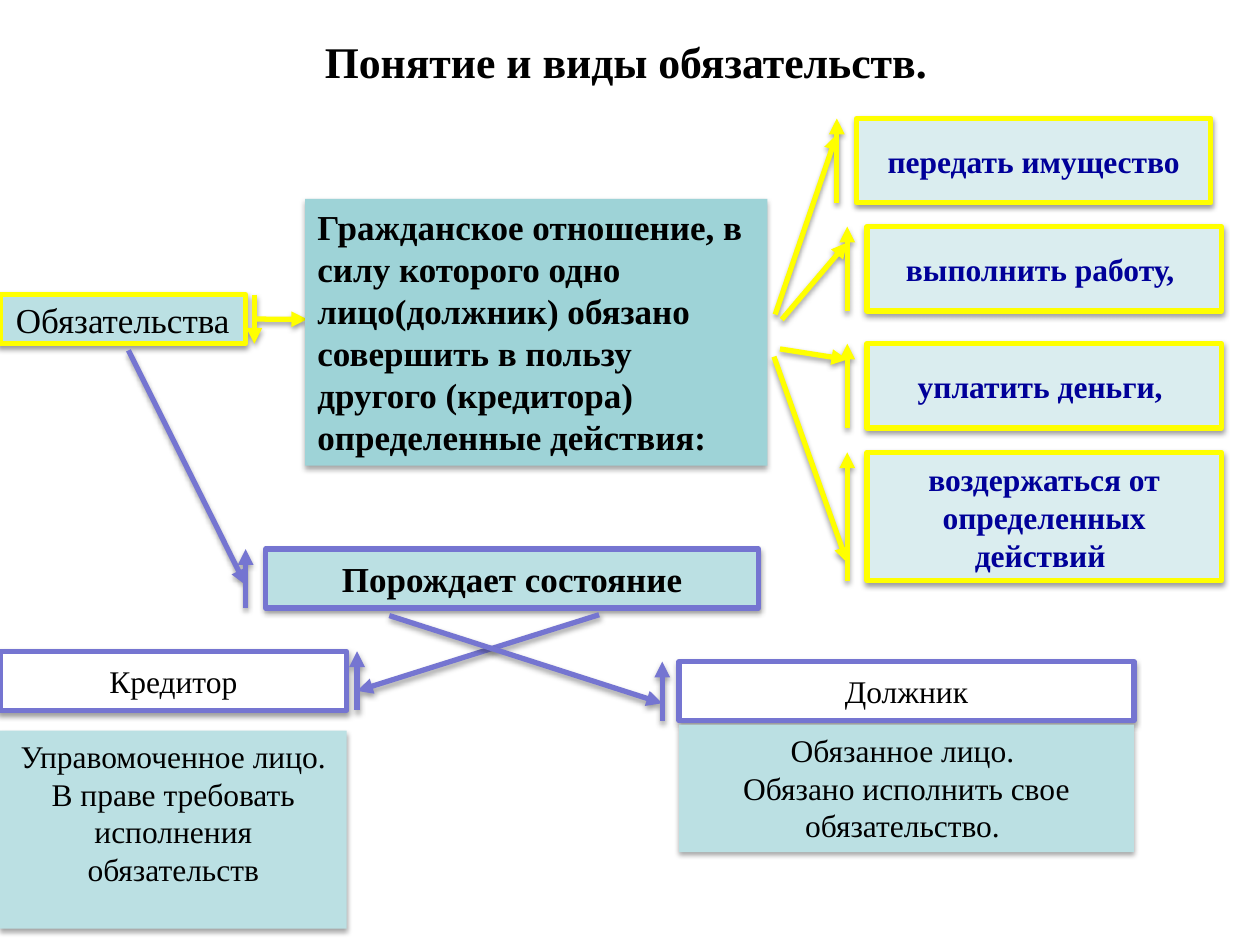
from lxml import etree
from pptx import Presentation
from pptx import util as u
from pptx.dml.color import RGBColor
from pptx.enum import shapes, text
from pptx.oxml import ns

BLACK = RGBColor(0x00, 0x00, 0x00)
NAVY = RGBColor(0x00, 0x00, 0x99)
WHITE = RGBColor(0xFF, 0xFF, 0xFF)
YELLOW = RGBColor(0xFF, 0xFF, 0x00)
VIOLET = RGBColor(0x75, 0x75, 0xD1)
TEAL = RGBColor(0x9E, 0xD3, 0xD7)
AQUA = RGBColor(0xBB, 0xE0, 0xE3)
PALE = RGBColor(0xDA, 0xED, 0xEF)

CENTER, LEFT = text.PP_ALIGN.CENTER, text.PP_ALIGN.LEFT
CALLOUT = shapes.MSO_SHAPE.LINE_CALLOUT_1_BORDER_AND_ACCENT_BAR

prs = Presentation()
prs.slide_width, prs.slide_height = u.Cm(25.4), u.Cm(19.05)
slide = prs.slides.add_slide(prs.slide_layouts[6])


def write(box, lines, size, color=BLACK, bold=False, align=CENTER,
          anchor=text.MSO_ANCHOR.TOP):
    frame = box.text_frame
    frame.word_wrap = True
    frame.vertical_anchor = anchor
    for i, line in enumerate(lines):
        para = frame.paragraphs[0] if i == 0 else frame.add_paragraph()
        para.alignment = align
        run = para.add_run()
        run.text = line
        run.font.name = "Times New Roman"
        run.font.size = u.Pt(size)
        run.font.bold = bold
        run.font.color.rgb = color


def add_block(kind, place, fill, drop, opacity):
    """Filled shape with a soft shadow falling straight down."""
    block = slide.shapes.add_shape(kind, *(u.Cm(v) for v in place))
    block.fill.solid()
    block.fill.fore_color.rgb = fill
    block.line.fill.background()
    block.shadow.inherit = False
    effects = block._element.spPr.find(ns.qn("a:effectLst"))
    shadow = etree.SubElement(
        effects, ns.qn("a:outerShdw"), blurRad=str(u.Pt(3.1)),
        dist=str(u.Pt(drop)), dir="5400000", rotWithShape="0")
    tint = etree.SubElement(shadow, ns.qn("a:srgbClr"), val="000000")
    etree.SubElement(tint, ns.qn("a:alpha"), val=str(opacity * 1000))
    return block


# Title
title = slide.shapes.add_textbox(u.Cm(4.65), u.Cm(0.58), u.Cm(15.93), u.Cm(1.32))
write(title, ["Понятие и виды обязательств."], 25, bold=True)

# Plain panels: place, fill, lines, size, bold, alignment
panels = [
    ((6.15, 4.01, 9.32, 5.38), TEAL,
     ["Гражданское отношение, в силу которого одно лицо(должник) обязано "
      "совершить в пользу другого (кредитора) определенные действия:"],
     20, True, LEFT),
    ((0, 14.73, 6.99, 3.99), AQUA,
     ["Управомоченное лицо. В праве требовать исполнения обязательств"],
     18, False, CENTER),
    ((13.69, 14.61, 9.17, 2.57), AQUA,
     ["Обязанное лицо. ", "Обязано исполнить свое обязательство. "],
     18, False, CENTER),
]

# Callouts: place, pointer (y1, x1, y2, x2), arrow end, fill, line, lines,
# size, colour, bold
ACTION_X, ACTION_W, ACTION_H = 17.48, 7.14, 1.7
ACTION = ("headEnd", PALE, YELLOW)
callouts = [
    ((0, 5.94, 4.95, 0.99), (0.498, 1.036, 0.504, 1.251),
     "tailEnd", AQUA, YELLOW, ["Обязательства"], 20, BLACK, False),
    ((17.27, 2.39, ACTION_W, ACTION_H), (0.188, -0.056, 2.324, -0.23),
     *ACTION, ["передать имущество"], 18, NAVY, True),
    ((ACTION_X, 4.57, ACTION_W, ACTION_H), (0.188, -0.056, 1.102, -0.241),
     *ACTION, ["выполнить работу, "], 18, NAVY, True),
    ((ACTION_X, 6.93, ACTION_W, ACTION_H), (0.188, -0.056, 0.062, -0.246),
     *ACTION, ["уплатить деньги, "], 18, NAVY, True),
    ((ACTION_X, 9.12, ACTION_W, 2.59), (0.859, -0.056, -0.745, -0.263),
     *ACTION, ["воздержаться от", "определенных действий "], 18, NAVY, True),
    ((5.36, 11.07, 9.93, 1.19), (0.608, -0.041, -3.368, -0.279),
     "headEnd", AQUA, VIOLET, ["Порождает состояние"], 20, BLACK, True),
    ((0, 13.13, 6.99, 1.19), (0.672, 1.03, -0.62, 1.728),
     "headEnd", WHITE, VIOLET, ["Кредитор"], 18, BLACK, False),
    ((13.69, 13.34, 9.17, 1.19), (0.705, -0.037, -0.782, -0.637),
     "headEnd", WHITE, VIOLET, ["Должник"], 18, BLACK, False),
]

# The definition panel covers the first pointer; the others follow the callouts
order = callouts[:1] + panels[:1] + callouts[1:] + panels[1:]
for item in order:
    if item in panels:
        place, fill, lines, size, bold, align = item
        panel = add_block(shapes.MSO_SHAPE.RECTANGLE, place, fill, 1.8, 35)
        write(panel, lines, size, bold=bold, align=align)
        continue
    place, pointer, arrow_end, fill, line, lines, size, color, bold = item
    callout = add_block(CALLOUT, place, fill, 1.6, 38)
    for i, value in enumerate(pointer):
        callout.adjustments[i] = value
    callout.line.color.rgb = line
    callout.line.width = u.Pt(3)
    outline = callout._element.spPr.find(ns.qn("a:ln"))
    etree.SubElement(outline, ns.qn("a:" + arrow_end), type="triangle")
    write(callout, lines, size, color, bold, anchor=text.MSO_ANCHOR.MIDDLE)

prs.save("out.pptx")
